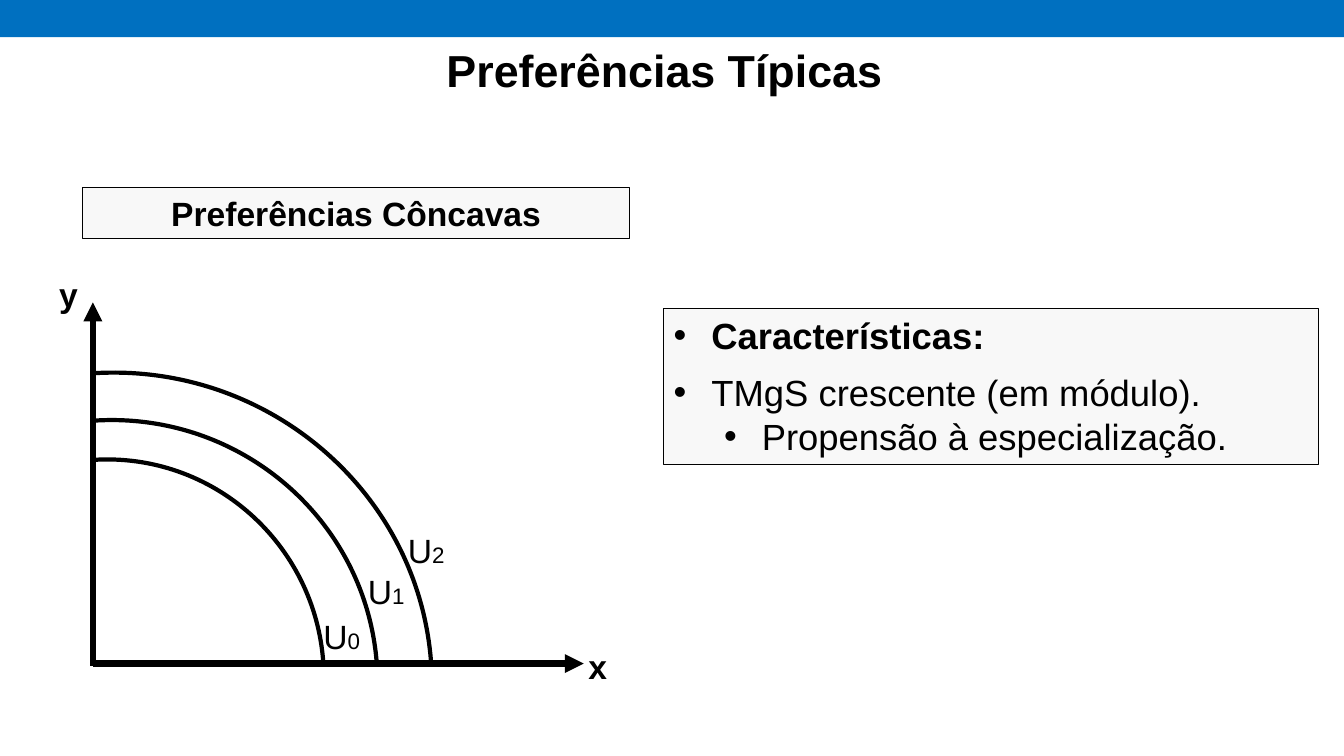
from lxml import etree
from pptx import Presentation
from pptx.dml.color import RGBColor
from pptx.enum.shapes import MSO_CONNECTOR, MSO_SHAPE
from pptx.enum.text import MSO_ANCHOR, MSO_AUTO_SIZE, PP_ALIGN
from pptx.oxml.ns import qn
from pptx.util import Cm, Pt

RECTANGLE, STRAIGHT = MSO_SHAPE.RECTANGLE, MSO_CONNECTOR.STRAIGHT
LEFT, CENTER, RIGHT = PP_ALIGN.LEFT, PP_ALIGN.CENTER, PP_ALIGN.RIGHT
TOP, BOTTOM = MSO_ANCHOR.TOP, MSO_ANCHOR.BOTTOM
FIT_SHAPE, NO_FIT = MSO_AUTO_SIZE.SHAPE_TO_FIT_TEXT, MSO_AUTO_SIZE.NONE
COLORS = {"bar": "0070C0", "panel": "F8F8F8", "ink": "000000"}
FONT = "Arial"


def color(name):
    return RGBColor.from_string(COLORS[name])


def write(para, text, size=24, bold=False, align=LEFT):
    """Add one formatted span of text to a paragraph."""
    para.alignment = align
    span = para.add_run()
    span.text = text
    span.font.name, span.font.size, span.font.bold = FONT, Pt(size), bold
    span.font.color.rgb = color("ink")


def add_bullet(para, indent, hanging):
    properties = para._p.get_or_add_pPr()
    properties.set("marL", str(Cm(indent)))
    properties.set("indent", str(-Cm(hanging)))
    etree.SubElement(properties, qn("a:buFont")).set("typeface", FONT)
    etree.SubElement(properties, qn("a:buChar")).set("char", "•")


def add_panel(page, left, top, width, height):
    """Add a pale outlined rectangle and return its text frame."""
    panel = page.shapes.add_shape(RECTANGLE, Cm(left), Cm(top), Cm(width), Cm(height))
    panel.shadow.inherit = False
    panel.fill.solid()
    panel.fill.fore_color.rgb = color("panel")
    panel.line.color.rgb = color("ink")
    panel.line.width = Pt(0.75)
    frame = panel.text_frame
    frame.word_wrap = True
    frame.auto_size = FIT_SHAPE
    frame.vertical_anchor = TOP
    return frame


def add_label(page, left, top, width, wrap=True):
    """Add a one-line text box and return its paragraph."""
    box = page.shapes.add_textbox(Cm(left), Cm(top), Cm(width), Cm(1.27))
    box.text_frame.word_wrap = wrap
    box.text_frame.auto_size = FIT_SHAPE
    return box.text_frame.paragraphs[0]


def add_axis(page, start, end):
    axis = page.shapes.add_connector(STRAIGHT, *(Cm(value) for value in start + end))
    axis.line.color.rgb = color("ink")
    axis.line.width = Pt(4.5)
    etree.SubElement(axis.line._get_or_add_ln(), qn("a:tailEnd")).set("type", "triangle")
    etree.SubElement(axis._element.spPr, qn("a:effectLst"))


def add_curve(page, *points):
    """Draw one Bézier segment from its start, two controls and its end."""
    start, *others = [(Cm(x), Cm(y)) for x, y in points]
    builder = page.shapes.build_freeform(*start)
    builder.add_line_segments(others, close=False)
    curve = builder.convert_to_shape()

    # Join the three line segments into one cubic segment
    segments = list(curve._element.iter(qn("a:lnTo")))
    cubic = etree.SubElement(segments[0].getparent(), qn("a:cubicBezTo"))
    for segment in segments:
        cubic.append(segment[0])
        segment.getparent().remove(segment)

    curve.shadow.inherit = False
    curve.fill.background()
    curve.line.color.rgb = color("ink")
    curve.line.width = Pt(3)


def add_header(page, left, top, width, height):
    # Blue band along the top edge
    bar = page.shapes.add_shape(RECTANGLE, Cm(left), Cm(top), Cm(width), Cm(height))
    bar.shadow.inherit = False
    bar.fill.solid()
    bar.fill.fore_color.rgb = color("bar")
    bar.line.fill.background()

    # Title
    title = page.shapes.title
    title.left, title.top = Cm(left + 1.89), Cm(top + 0.38)
    title.width, title.height = Cm(29.72), Cm(2.18)
    frame = title.text_frame
    frame.auto_size = NO_FIT
    frame.vertical_anchor = BOTTOM
    write(frame.paragraphs[0], "Preferências Típicas", size=32, bold=True, align=CENTER)


def add_heading(page, left, top, width, height):
    frame = add_panel(page, left, top, width, height)
    write(frame.paragraphs[0], "Preferências Côncavas", bold=True, align=CENTER)


def add_indifference_map(page, left, top, width, height):
    """Draw axes and curves; the origin is the lower left corner of the box."""
    bottom = top + height

    # Axes and their names
    add_axis(page, (left, bottom + 0.05), (left, top))
    add_axis(page, (left, bottom), (left + width, bottom))
    write(add_label(page, left - 1.12, top - 0.84, 0.99, wrap=False), "y", bold=True, align=RIGHT)
    write(add_label(page, left + width - 0.13, bottom - 0.56, 0.99, wrap=False), "x", bold=True)

    # Offsets from the origin, upwards positive: foot, two controls, peak, label
    curves = [
        ((5.81, 0), (5.61, 3.02), (3.02, 5.33), (0, 5.13), (5.56, 1.32)),
        ((7.16, -0.05), (6.91, 3.6), (3.73, 6.35), (0.05, 6.12), (6.68, 2.47)),
        ((8.53, -0.05), (8.25, 4.31), (4.39, 7.62), (-0.05, 7.31), (7.69, 3.48)),
    ]
    for number, offsets in enumerate(curves):
        *points, label = [(left + x, bottom - y) for x, y in offsets]
        add_curve(page, *points)
        para = add_label(page, *label, 3.23)
        write(para, "U")
        write(para, str(number), size=16)


def add_features(page, left, top, width, height):
    frame = add_panel(page, left, top, width, height)
    items = [
        ("Características:", 0, True, 0),
        ("TMgS crescente (em módulo).", 0, False, 9.5),
        ("Propensão à especialização.", 1, False, 0),
    ]
    for index, (text, level, bold, gap) in enumerate(items):
        para = frame.add_paragraph() if index else frame.paragraphs[0]
        add_bullet(para, indent=0.95 + 1.27 * level, hanging=0.95)
        para.level = level
        if gap:
            para.space_before = Pt(gap)
        write(para, text, size=26, bold=bold)


def main():
    deck = Presentation()
    deck.slide_width, deck.slide_height = Cm(33.87), Cm(19.05)
    page = deck.slides.add_slide(deck.slide_layouts[5])
    add_header(page, 0, 0, 33.87, 0.94)
    add_heading(page, 2.08, 4.73, 13.79, 1.27)
    add_indifference_map(page, 2.34, 7.62, 12.37, 9.1)
    add_features(page, 16.73, 7.77, 16.51, 3.94)
    deck.save("out.pptx")


if __name__ == "__main__":
    main()
